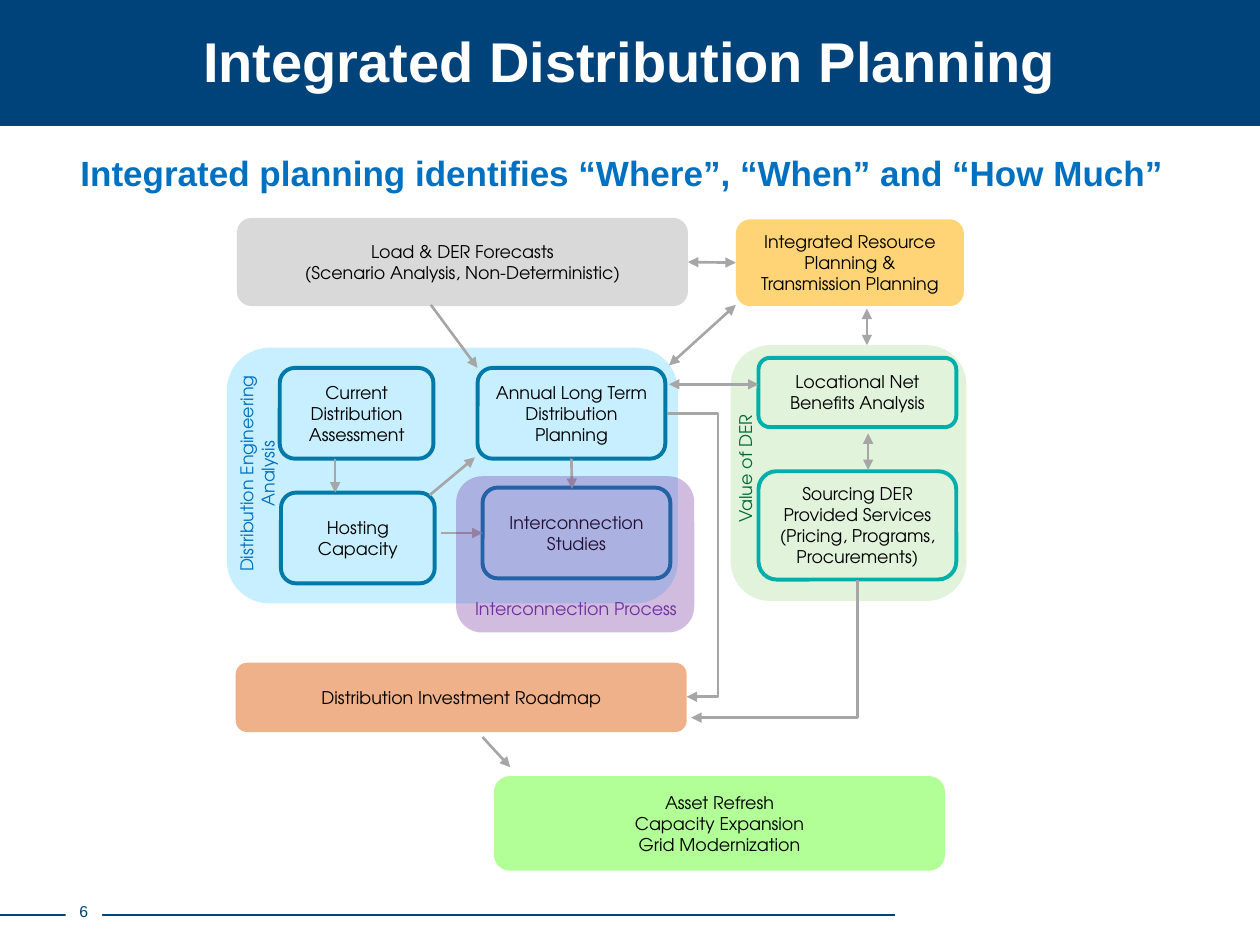
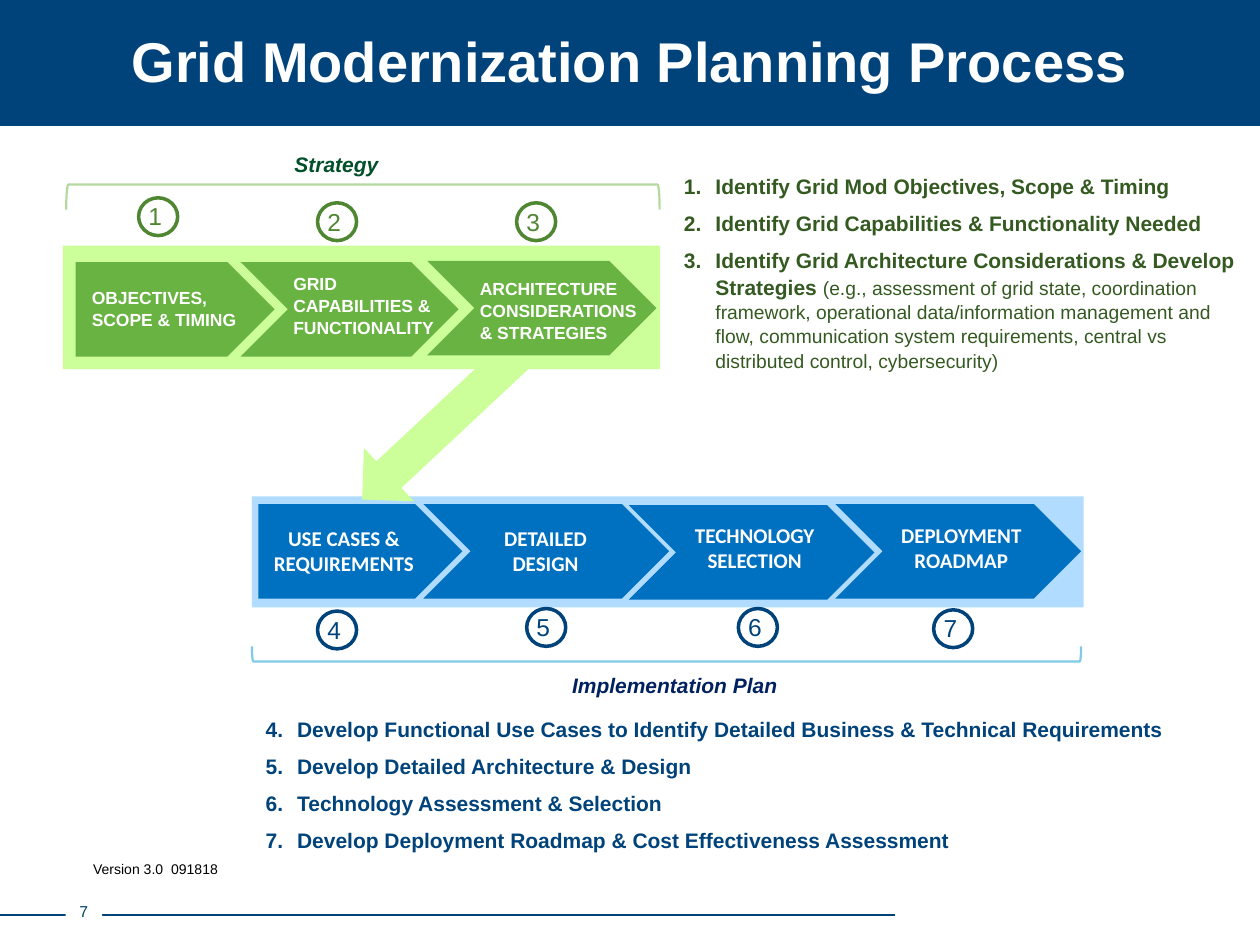
from lxml import etree
from pptx import Presentation
from pptx.dml.color import RGBColor
from pptx.enum.shapes import MSO_CONNECTOR, MSO_SHAPE
from pptx.enum.text import MSO_ANCHOR, PP_ALIGN
from pptx.oxml.ns import qn
from pptx.util import Inches, Pt

RECT, ROUNDED, OVAL = MSO_SHAPE.RECTANGLE, MSO_SHAPE.ROUNDED_RECTANGLE, MSO_SHAPE.OVAL
HOME_PLATE, CHEVRON = MSO_SHAPE.PENTAGON, MSO_SHAPE.CHEVRON
RIGHT_ARROW, BRACKET = MSO_SHAPE.RIGHT_ARROW, MSO_SHAPE.LEFT_BRACKET
STRAIGHT, ELBOW = MSO_CONNECTOR.STRAIGHT, MSO_CONNECTOR.ELBOW
LEFT, CENTER = PP_ALIGN.LEFT, PP_ALIGN.CENTER
TOP, MIDDLE = MSO_ANCHOR.TOP, MSO_ANCHOR.MIDDLE
SIDE_LEFT, SIDE_BOTTOM, SIDE_RIGHT = 1, 2, 3

rgb = RGBColor.from_string
NAVY, WHITE, BLACK, ARROW_GREY = "00437B", "FFFFFF", "000000", "A6A6A6"
BLUE, LEAF, PALE_GREEN, DARK_GREEN = "0070C0", "69B342", "CCFF99", "345A21"
TITLE = {"name": "Arial", "size": Pt(32), "bold": True}
SUBTITLE = {"name": "Arial", "size": Pt(20), "bold": True}
PAGE_NUMBER = {"name": "Arial", "size": Pt(9)}
DIAGRAM = {"name": "TeX Gyre Adventor", "size": Pt(10)}
STRATEGY_STEP = {"name": "Arial", "size": Pt(10), "bold": True}
PLAN_STEP = {"name": "Calibri", "size": Pt(12), "bold": True}
STEP_NUMBER = {"name": "Arial", "size": Pt(14)}
LIST = {"name": "Arial", "size": Pt(12), "bold": True}
LIST_DETAIL = {"name": "Arial", "size": Pt(11), "bold": False}
PHASE = {"name": "Arial", "size": Pt(12), "bold": True, "italic": True}
VERSION = {"name": "Arial", "size": Pt(8)}


def place(slide, kind, at, text="", font=DIAGRAM, color=BLACK, fill=None, line=None,
          alpha=None, align=CENTER, anchor=None, inset=None, rotation=0, spacing=None):
    """Add a preset shape, or a text box when kind is None; line is (colour, points)."""
    box = [Inches(length) for length in at]
    if kind is None:
        shape = slide.shapes.add_textbox(*box)
    else:
        shape = slide.shapes.add_shape(kind, *box)
        shape.shadow.inherit = False
        if fill:
            shape.fill.solid()
            shape.fill.fore_color.rgb = rgb(fill)
        else:
            shape.fill.background()
        if line:
            shape.line.color.rgb = rgb(line[0])
            shape.line.width = Pt(line[1])
        else:
            shape.line.fill.background()
    if alpha:
        for tint in shape._element.spPr.iter(qn("a:srgbClr")):
            etree.SubElement(tint, qn("a:alpha"), val=str(alpha * 1000))
    shape.rotation = rotation
    frame = shape.text_frame
    frame.word_wrap = True
    frame.vertical_anchor = anchor or (MIDDLE if kind else TOP)
    if inset is not None:
        for side in ("left", "top", "right", "bottom"):
            setattr(frame, f"margin_{side}", Inches(inset))
    for index, words in enumerate(text.split("\n") if text else []):
        paragraph = frame.paragraphs[0] if index == 0 else frame.add_paragraph()
        paragraph.alignment = align
        if spacing:
            paragraph.line_spacing = spacing
        run = paragraph.add_run()
        run.text = words
        run.font.color.rgb = rgb(color)
        for name, value in font.items():
            setattr(run.font, name, value)
    return shape


def connect(slide, start, end, kind=STRAIGHT, color=ARROW_GREY, width=1.5, ends=("tailEnd",)):
    """Add a connector; ends names the arrowheads, headEnd at start and tailEnd at end."""
    points = [Inches(length) for length in (*start, *end)]
    connector = slide.shapes.add_connector(kind, *points)
    connector.line.color.rgb = rgb(color)
    connector.line.width = Pt(width)
    for arrowhead in ends:
        etree.SubElement(connector.line._get_or_add_ln(), qn(f"a:{arrowhead}"), type="triangle")
    etree.SubElement(connector._element.spPr, qn("a:effectLst"))
    return connector


presentation = Presentation()
presentation.slide_width, presentation.slide_height = Inches(10), Inches(7.5)

# Title band and footer of both slides
slides = []
for page, title, title_left in [
    ("6", "Integrated Distribution Planning", 0.5),
    ("7", "Grid Modernization Planning Process", 0),
]:
    slide = presentation.slides.add_slide(presentation.slide_layouts[6])
    place(slide, RECT, (0, 0, 10, 1), fill=NAVY)
    connect(slide, (-0.01, 7.26), (7.1, 7.26), color=NAVY, width=1, ends=())
    place(slide, RECT, (0.52, 7.16, 0.29, 0.25), page, PAGE_NUMBER, "00446A",
          fill=WHITE, inset=0, anchor=TOP)
    place(slide, None, (title_left, 0.17, 10 - 2 * title_left, 0.62), title, TITLE, WHITE,
          anchor=MIDDLE)
    slides.append(slide)
planning, process = slides

# Slide 1: subtitle and background panels
place(planning, None, (0.54, 1.15, 8.88, 0.44),
      "Integrated planning identifies “Where”, “When” and “How Much”",
      SUBTITLE, BLUE, align=LEFT)
place(planning, ROUNDED, (1.8, 2.76, 3.58, 2.03), fill="53D0FF", alpha=32)
place(planning, ROUNDED, (5.8, 2.74, 1.87, 2.03), fill="A5DA94", alpha=32)

# Filled planning stages
forecasts = place(planning, ROUNDED, (1.88, 1.73, 3.58, 0.7),
                  "Load & DER Forecasts\n(Scenario Analysis, Non-Deterministic)", fill="D9D9D9")
resource_planning = place(planning, ROUNDED, (5.84, 1.74, 1.81, 0.69),
                          "Integrated Resource Planning & Transmission Planning",
                          fill="FED476")
place(planning, ROUNDED, (1.87, 5.26, 3.58, 0.55), "Distribution Investment Roadmap",
      fill="DF6417", alpha=50)
place(planning, ROUNDED, (3.92, 6.16, 3.58, 0.75),
      "Asset Refresh\nCapacity Expansion\nGrid Modernization", fill="66FF33", alpha=50)

# Outlined analyses
analyses = {}
for at, analysis, outline in [
    ((2.22, 2.92, 1.22, 0.72), "Current Distribution Assessment", "0079A8"),
    ((2.23, 3.91, 1.22, 0.72), "Hosting Capacity", "0079A8"),
    ((3.79, 2.92, 1.49, 0.72), "Annual Long Term Distribution Planning", "0079A8"),
    ((3.83, 3.87, 1.49, 0.72), "Interconnection Studies", "0079A8"),
    ((6.02, 2.84, 1.57, 0.55), "Locational Net Benefits Analysis", "00AFAA"),
    ((6.02, 3.74, 1.57, 0.86),
     "Sourcing DER Provided Services (Pricing, Programs, Procurements)", "00AFAA"),
]:
    analyses[analysis] = place(planning, ROUNDED, at, analysis, line=(outline, 2.25))

# Panel captions
place(planning, None, (5.27, 3.62, 1.32, 0.2), "Value of DER", color="006A36",
      inset=0, rotation=270)
place(planning, None, (3.65, 4.75, 1.84, 0.24), "Interconnection Process", color="7030A0",
      inset=0)
engineering = place(planning, None, (1.87, 2.9, 0.34, 1.72),
                    "Distribution Engineering Analysis", color=BLUE, inset=0, anchor=MIDDLE)
engineering.text_frame._txBody.bodyPr.set("vert", "vert270")

# One-way arrows
for start, end in [
    ((2.66, 3.64), (2.66, 3.91)),
    ((3.41, 3.93), (3.77, 3.63)),
    ((3.42, 2.42), (3.79, 2.92)),
    ((3.83, 5.85), (4.05, 6.09)),
]:
    connect(planning, start, end)
hosting_to_studies = connect(planning, (3.5, 4.23), (3.83, 4.23))
hosting_to_studies.end_connect(analyses["Interconnection Studies"], SIDE_LEFT)
annual_to_studies = connect(planning, (4.54, 3.64), (4.54, 3.88))
annual_to_studies.begin_connect(analyses["Annual Long Term Distribution Planning"], SIDE_BOTTOM)

# Two-way arrows
both = ("headEnd", "tailEnd")
for start, end in [
    ((6.89, 3.44), (6.89, 3.73)),
    ((5.31, 3.05), (6.02, 3.05)),
    ((5.31, 2.9), (5.84, 2.42)),
    ((6.88, 2.45), (6.88, 2.74)),
]:
    connect(planning, start, end, ends=both)
forecasts_to_resources = connect(planning, (5.46, 2.08), (5.84, 2.08), ends=both)
forecasts_to_resources.begin_connect(forecasts, SIDE_RIGHT)
forecasts_to_resources.end_connect(resource_planning, SIDE_LEFT)

# Elbow arrows into the roadmap: one bulges to the right, one turns a single corner
annual_to_roadmap = connect(planning, (5.29, 3.28), (5.45, 5.53), ELBOW)
bend = annual_to_roadmap._element.spPr.prstGeom.get_or_add_avLst()
etree.SubElement(bend, qn("a:gd"), name="adj1", fmla="val 255300")
sourcing_to_roadmap = connect(planning, (5.6, 4.49), (6.69, 5.81), ELBOW)
sourcing_to_roadmap._element.spPr.prstGeom.set("prst", "bentConnector2")
sourcing_to_roadmap._element.spPr.xfrm.set("rot", str(90 * 60000))

# Translucent interconnection panel lies over its studies
place(planning, ROUNDED, (3.62, 3.78, 1.89, 1.24), fill="7030A0", alpha=32)

# Slide 2: phase bands and the arrow between them
place(process, RECT, (2, 3.94, 6.6, 0.88), fill="B2DCFF")
place(process, RIGHT_ARROW, (2.58, 2.93, 2.18, 0.58), fill=PALE_GREEN, rotation=136.9)
place(process, RECT, (0.5, 1.95, 4.74, 0.98), fill=PALE_GREEN)

# Strategy steps
for kind, at, label_at, label in [
    (HOME_PLATE, (0.6, 2.08, 1.58, 0.75), (0.63, 2.22, 1.38, 0.44),
     "OBJECTIVES, SCOPE & TIMING"),
    (CHEVRON, (1.91, 2.08, 1.73, 0.75), (2.23, 2.11, 1.4, 0.61),
     "GRID CAPABILITIES & FUNCTIONALITY"),
    (CHEVRON, (3.39, 2.07, 1.82, 0.75), (3.71, 2.15, 1.48, 0.61),
     "ARCHITECTURE CONSIDERATIONS\n& STRATEGIES"),
]:
    place(process, kind, at, fill=LEAF)
    place(process, None, label_at, label, STRATEGY_STEP, WHITE, align=LEFT, spacing=1.05)

# Implementation steps
for kind, at, label_at, label in [
    (HOME_PLATE, (2.05, 4, 1.62, 0.75), (2, 4.12, 1.46, 0.54), "USE CASES & REQUIREMENTS"),
    (CHEVRON, (3.36, 4, 1.95, 0.75), (3.7, 4.12, 1.26, 0.54), "DETAILED DESIGN"),
    (CHEVRON, (4.99, 4.01, 1.95, 0.75), (5.21, 4.1, 1.56, 0.56), "TECHNOLOGY SELECTION"),
    (CHEVRON, (6.63, 4, 1.95, 0.75), (6.85, 4.1, 1.56, 0.56), "DEPLOYMENT ROADMAP"),
]:
    place(process, kind, at, fill=BLUE)
    place(process, None, label_at, label, PLAN_STEP, WHITE)

# Step numbers: green for strategy, navy for implementation
for number, (left, top) in enumerate([
    (1.1, 1.57), (2.52, 1.61), (4.1, 1.61),
    (2.52, 4.85), (4.18, 4.83), (5.86, 4.83), (7.41, 4.84),
], start=1):
    number_color = "4F8631" if number <= 3 else NAVY
    place(process, OVAL, (left, top, 0.31, 0.3), fill=WHITE, line=(number_color, 2))
    place(process, None, (left - 0.02, top - 0.02, 0.34, 0.34), str(number), STEP_NUMBER,
          number_color, align=LEFT)

# Phase names and brackets
for at, phase, color in [
    ((1.46, 1.15, 2.42, 0.3), "Strategy", "005029"),
    ((4.21, 5.29, 2.29, 0.3), "Implementation Plan", "002060"),
]:
    place(process, None, at, phase, PHASE, color)
place(process, BRACKET, (2.78, -0.79, 0.2, 4.71), line=(LEAF, 1.25), alpha=50, rotation=90)
place(process, BRACKET, (5.23, 1.9, 0.12, 6.58), line=("0197CF", 1.25), alpha=50, rotation=270)

# Numbered explanations
strategy_list = place(
    process, None, (5.33, 1.32, 4.58, 1.81),
    "Identify Grid Mod Objectives, Scope & Timing\n"
    "Identify Grid Capabilities & Functionality Needed\n"
    "Identify Grid Architecture Considerations & Develop Strategies ",
    LIST, DARK_GREEN, align=LEFT, spacing=1.05)
detail = strategy_list.text_frame.paragraphs[-1].add_run()
detail.text = ("(e.g., assessment of grid state, coordination framework, operational "
               "data/information management and flow, communication system requirements, "
               "central vs distributed control, cybersecurity)")
detail.font.color.rgb = rgb(DARK_GREEN)
for name, value in LIST_DETAIL.items():
    setattr(detail.font, name, value)
plan_list = place(
    process, None, (2.01, 5.63, 7.38, 1.18),
    "Develop Functional Use Cases to Identify Detailed Business & Technical Requirements\n"
    "Develop Detailed Architecture & Design\n"
    "Technology Assessment & Selection\n"
    "Develop Deployment Roadmap & Cost Effectiveness Assessment",
    LIST, NAVY, align=LEFT, spacing=1.05)
for numbered, first in [(strategy_list, 1), (plan_list, 4)]:
    for index, paragraph in enumerate(numbered.text_frame.paragraphs):
        paragraph.space_before = Pt(6 if index else 0)
        properties = paragraph._p.get_or_add_pPr()
        properties.set("marL", str(Inches(0.25)))
        properties.set("indent", str(Inches(-0.25)))
        etree.SubElement(properties, qn("a:buAutoNum"), type="arabicPeriod", startAt=str(first))

# Version note
place(process, None, (0.64, 6.78, 1.22, 0.24), "Version 3.0  091818", VERSION, align=LEFT)

presentation.save("out.pptx")
